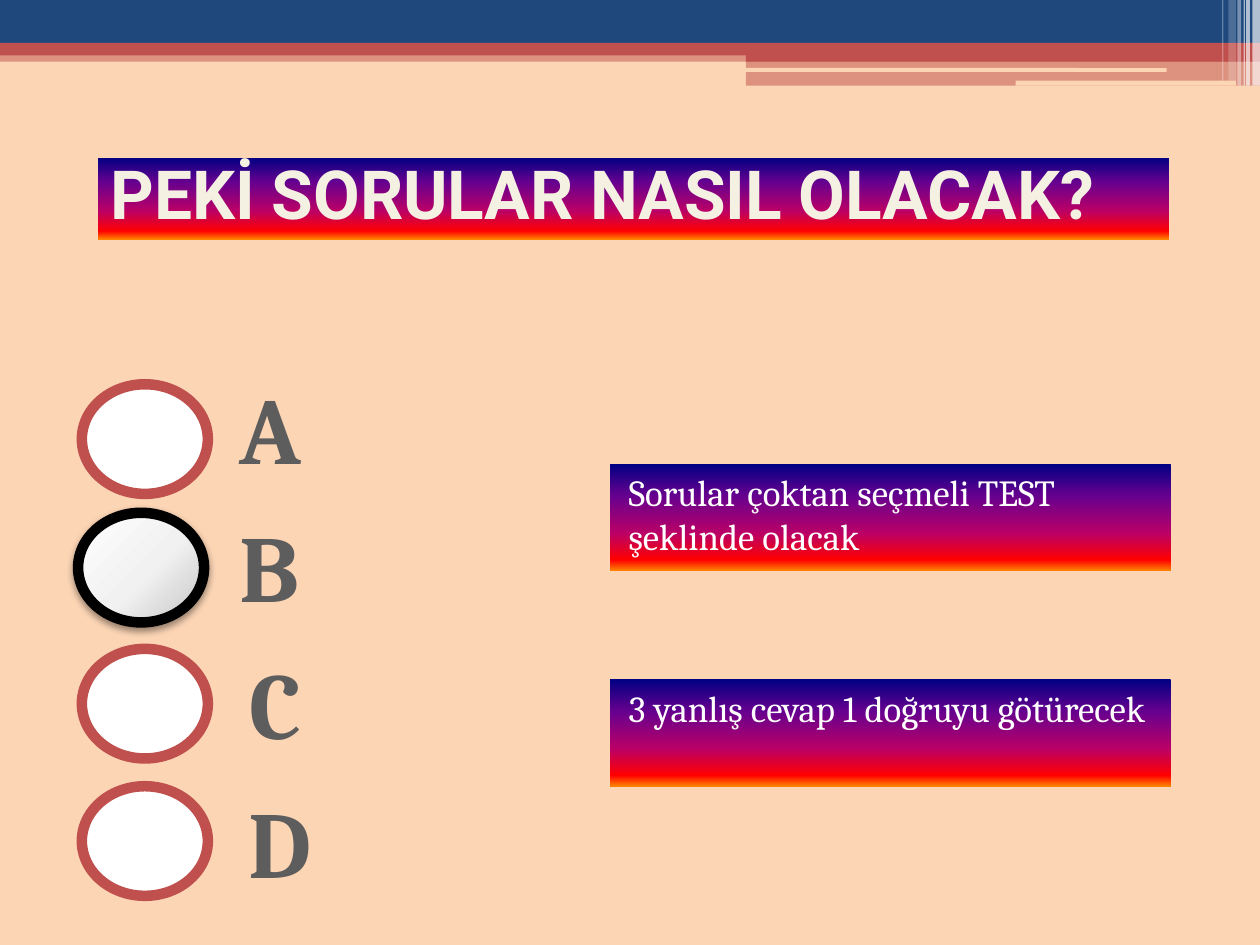
from lxml import etree
from pptx import Presentation
from pptx.dml.color import RGBColor
from pptx.enum.shapes import MSO_SHAPE
from pptx.enum.text import MSO_ANCHOR, PP_ALIGN
from pptx.oxml.ns import qn
from pptx.util import Inches, Pt

RECT, ROUNDED, OVAL = MSO_SHAPE.RECTANGLE, MSO_SHAPE.ROUNDED_RECTANGLE, MSO_SHAPE.OVAL
TOP, BOTTOM = MSO_ANCHOR.TOP, MSO_ANCHOR.BOTTOM
LEFT, CENTER = PP_ALIGN.LEFT, PP_ALIGN.CENTER

# The slide is a grid of 1000 columns by 750 rows; boxes are (column, row, columns, rows)
COLUMNS, ROWS = 1000, 750
CELL = Inches(10) // COLUMNS

COLORS = {"peach": "FCD5B5", "navy": "1F497D", "red": "C0504D", "white": "FFFFFF",
          "black": "000000", "cream": "F4F1E3", "letter": "5D5D5D"}
SUNSET = [(0, "000082"), (30, "66008F"), (65, "BA0066"), (90, "FF0000"), (100, "FF8200")]
SILVER = [(0, "FEFEFE"), (55, "F1F1F1"), (100, "C5C5C5")]


def rgb(name):
    return RGBColor.from_string(COLORS[name])


def add_node(parent, tag, **attributes):
    return etree.SubElement(parent, qn(tag), {k: str(v) for k, v in attributes.items()})


def add_color(parent, value, alpha):
    color = add_node(parent, "a:srgbClr", val=value)
    add_node(color, "a:alpha", val=alpha * 1000)


def add_block(slide, box, color=None, kind=RECT, alpha=100):
    block = slide.shapes.add_shape(kind, *(cells * CELL for cells in box))
    block.shadow.inherit = False
    block.line.fill.background()
    if color:
        block.fill.solid()
        block.fill.fore_color.rgb = rgb(color)
        if alpha < 100:
            solid = block.fill._xPr.find(qn("a:solidFill"))
            add_node(solid[0], "a:alpha", val=alpha * 1000)
    return block


def fill_gradient(block, stops, radial=False):
    block.fill.gradient()
    gradient = block.fill._xPr.find(qn("a:gradFill"))
    for child in list(gradient):
        gradient.remove(child)
    stop_list = add_node(gradient, "a:gsLst")
    for position, value in stops:
        add_color(add_node(stop_list, "a:gs", pos=position * 1000), value, 100)
    if radial:
        circle = add_node(gradient, "a:path", path="circle")
        add_node(circle, "a:fillToRect", l=-40000, t=-90000, r=140000, b=190000)
    else:
        add_node(gradient, "a:lin", ang=90 * 60000, scaled=0)


def write(block, text, size, color, font="Cambria", bold=False, align=LEFT, anchor=TOP, wrap=True):
    frame = block.text_frame
    frame.word_wrap = wrap
    frame.vertical_anchor = anchor
    paragraph = frame.paragraphs[0]
    paragraph.alignment = align
    run = paragraph.add_run()
    run.text = text
    run.font.name = font
    run.font.size = Pt(size)
    run.font.bold = bold
    run.font.color.rgb = rgb(color)
    return paragraph


def draw_header(slide, box):
    left, top, width, height = box
    half = left + 592
    right = left + width

    # Full-width bands, then the stepped bands on the right half
    add_block(slide, (left, top + 40, width, 9), "red", alpha=50)
    add_block(slide, (left, top, width, 34), "navy")
    add_block(slide, (left, top + 34, width, 10), "red")
    add_block(slide, (half, top + 39, right - half, 10), "red")
    add_block(slide, (half, top + 48, right - half, height - 48), "red", alpha=50)

    # Thin cut-outs in the background colour
    for cutout in ((half - 1, top + 54, 335, 3), (left + 806, top + 64, 175, 4)):
        add_block(slide, cutout, "peach", ROUNDED)

    # Pale vertical stripes: distance from the right edge, width, height, opacity
    stripes = [(6, 6, height, 65), (11, 3, height, 65), (13, 1, height, 60),
               (18, 3, height, 40), (25, 6, height - 4, 20), (30, 1, height - 4, 30)]
    for offset, stripe_width, stripe_height, opacity in stripes:
        add_block(slide, (right - offset, top, stripe_width, stripe_height), "white", alpha=opacity)


def draw_title(slide, box, text):
    banner = add_block(slide, box)
    fill_gradient(banner, SUNSET)
    write(banner, text, 38.7, "cream", font="Roboto", bold=True, anchor=BOTTOM)


def draw_rule(slide, box, text):
    panel = add_block(slide, box)
    fill_gradient(panel, SUNSET)
    paragraph = write(panel, text, 21, "white")
    paragraph.space_before = Pt(3)
    paragraph._p.get_or_add_pPr().set("marL", str(5 * CELL))


def draw_bubble(slide, box, marked):
    bubble = add_block(slide, box, "white", OVAL)
    bubble.line.width = Pt(6)
    bubble.line.color.rgb = rgb("black" if marked else "red")
    if marked:
        fill_gradient(bubble, SILVER, radial=True)
        effects = bubble._element.spPr.find(qn("a:effectLst"))
        shadow = add_node(effects, "a:outerShdw", blurRad=Pt(4.1), dist=Pt(2),
                          dir=90 * 60000, rotWithShape=0)
        add_color(shadow, COLORS["black"], 40)


def draw_options(slide, box):
    left, top, width, height = box
    pitch = height / 4
    # Letter, letter column and width, bubble column and row
    options = [("A", 118, 67, 3, 16), ("B", 118, 63, 0, 118),
               ("C", 125, 63, 3, 226), ("D", 125, 68, 3, 335)]
    for index, (letter, column, letter_width, bubble_column, bubble_row) in enumerate(options):
        letter_box = (left + column, top + round(index * pitch), letter_width, 101)
        label = slide.shapes.add_textbox(*(cells * CELL for cells in letter_box))
        write(label, letter, 54, "letter", bold=True, align=CENTER, wrap=False)
        draw_bubble(slide, (left + bubble_column, top + bubble_row, 100, 87), letter == "B")


def main():
    deck = Presentation()
    deck.slide_width, deck.slide_height = COLUMNS * CELL, ROWS * CELL
    slide = deck.slides.add_slide(deck.slide_layouts[6])
    slide.background.fill.solid()
    slide.background.fill.fore_color.rgb = rgb("peach")

    draw_header(slide, (0, 0, COLUMNS, 68))
    draw_title(slide, (78, 125, 850, 65), "PEKİ SORULAR NASIL OLACAK?")
    draw_options(slide, (62, 289, 193, 437))
    rules = ["Sorular çoktan seçmeli TEST şeklinde olacak", "3 yanlış cevap 1 doğruyu götürecek"]
    for index, rule in enumerate(rules):
        draw_rule(slide, (484, 368 + index * 171, 445, 85), rule)
    deck.save("out.pptx")


if __name__ == "__main__":
    main()
